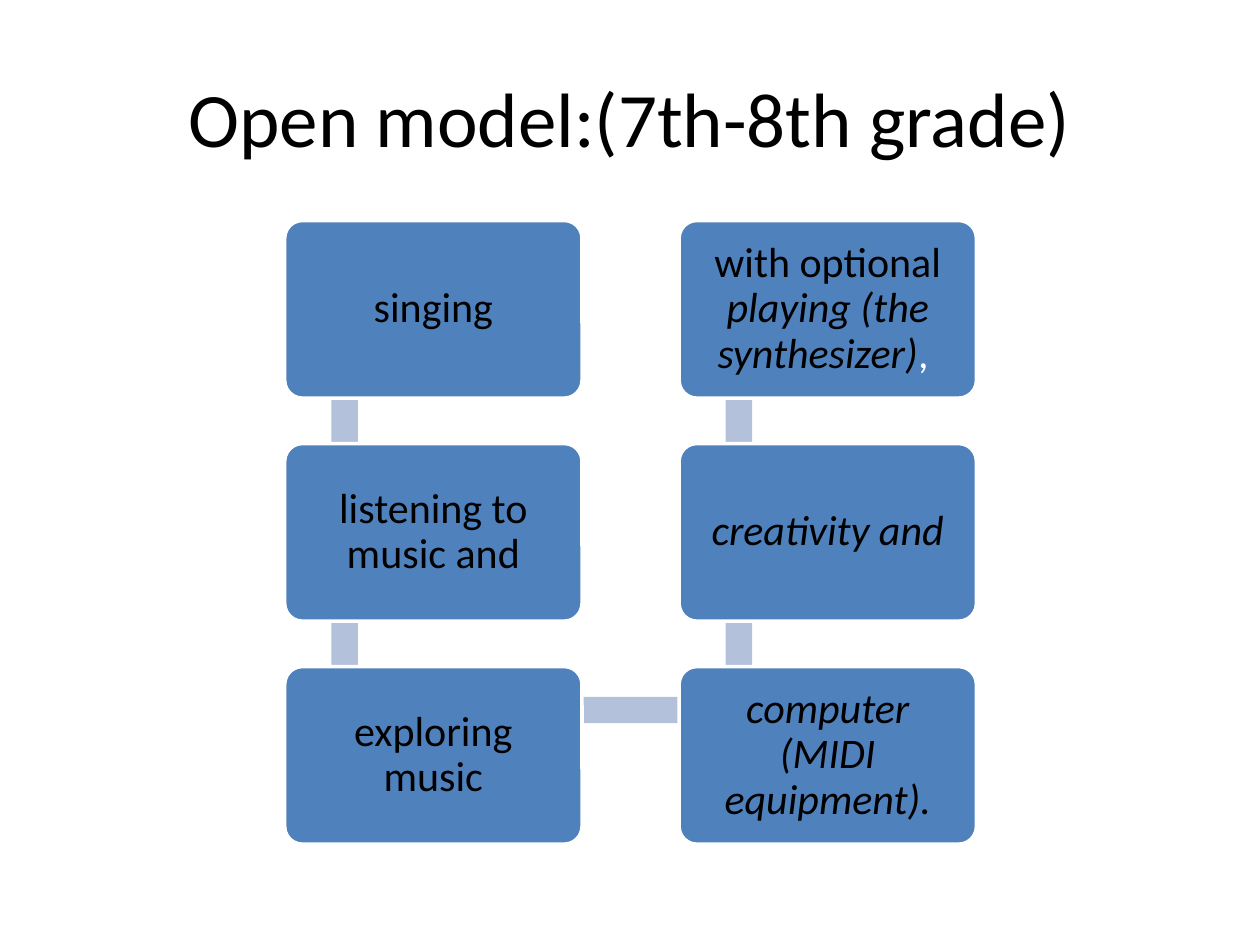
import pptx
import pptx.util
import pptx.dml.color
import pptx.enum.shapes
import pptx.enum.text

Inches = pptx.util.Inches
RGBColor = pptx.dml.color.RGBColor
SHAPES = pptx.enum.shapes.MSO_SHAPE

BLACK = RGBColor(0x00, 0x00, 0x00)
WHITE = RGBColor(0xFF, 0xFF, 0xFF)
BLUE = RGBColor(0x4F, 0x81, 0xBD)
PALE_BLUE = RGBColor(0xB3, 0xC1, 0xDB)

TITLE = "Open model:(7th-8th grade)"
ACTIVITIES = [
    [("singing", {})],
    [("listening to music and", {})],
    [("exploring music", {})],
    [("computer (MIDI equipment).", {"italic": True})],
    [("creativity and", {"italic": True})],
    [
        ("with optional ", {}),
        ("playing (the synthesizer)", {"italic": True}),
        (", ", {"color": WHITE}),
    ],
]

ROWS = 3
GRID_LEFT, GRID_TOP = 2.26, 1.75
COLUMN_STEP, ROW_STEP = 3.13, 1.77
BOX_WIDTH, BOX_HEIGHT = 2.36, 1.41
BAR_THICKNESS = 0.21


def add_text(paragraph, text, size=24, color=BLACK, italic=None):
    """Append a formatted run to a paragraph."""
    run = paragraph.add_run()
    run.text = text
    run.font.name = "Calibri"
    run.font.size = pptx.util.Pt(size)
    run.font.color.rgb = color
    run.font.italic = italic


def add_block(slide, kind, fill, left, top, width, height):
    """Add a filled shape without shadow or outline."""
    block = slide.shapes.add_shape(
        kind, Inches(left), Inches(top), Inches(width), Inches(height))
    block.shadow.inherit = False
    block.fill.solid()
    block.fill.fore_color.rgb = fill
    block.line.fill.background()
    return block


def snake_position(index):
    """Return the corner of a cell, going down one column and up the next."""
    column, step = divmod(index, ROWS)
    row = ROWS - 1 - step if column % 2 else step
    return GRID_LEFT + column * COLUMN_STEP, GRID_TOP + row * ROW_STEP


def add_bar(slide, start, end):
    """Join two neighbouring cells with a bar."""
    left, top = min(start, end)
    if start[0] == end[0]:
        frame = left + 0.37, top + 0.35, BAR_THICKNESS, ROW_STEP
    else:
        frame = left + 0.48, top + 0.24, COLUMN_STEP, BAR_THICKNESS
    add_block(slide, SHAPES.RECTANGLE, PALE_BLUE, *frame)


def add_activity(slide, position, runs):
    """Add one rounded box with its text."""
    box = add_block(slide, SHAPES.ROUNDED_RECTANGLE, BLUE, *position, BOX_WIDTH, BOX_HEIGHT)
    box.adjustments[0] = 0.1
    box.line.color.rgb = WHITE
    box.line.width = pptx.util.Pt(2)
    frame = box.text_frame
    frame.word_wrap = True
    frame.vertical_anchor = pptx.enum.text.MSO_ANCHOR.MIDDLE
    frame.margin_left = frame.margin_right = Inches(0.1)
    frame.margin_top = frame.margin_bottom = Inches(0.1)
    paragraph = frame.paragraphs[0]
    paragraph.alignment = pptx.enum.text.PP_ALIGN.CENTER
    paragraph.line_spacing = 0.9
    for text, style in runs:
        add_text(paragraph, text, **style)


def main():
    """Build the slide and save it."""
    deck = pptx.Presentation()
    deck.slide_width, deck.slide_height = Inches(10), Inches(7.5)
    slide = deck.slides.add_slide(deck.slide_layouts[5])

    title = slide.shapes.title
    title.left, title.top = Inches(0.5), Inches(0.3)
    title.width, title.height = Inches(9), Inches(1.25)
    title.text_frame.vertical_anchor = pptx.enum.text.MSO_ANCHOR.MIDDLE
    heading = title.text_frame.paragraphs[0]
    heading.alignment = pptx.enum.text.PP_ALIGN.CENTER
    add_text(heading, TITLE, size=44)

    positions = [snake_position(index) for index in range(len(ACTIVITIES))]
    for start, end in zip(positions, positions[1:]):
        add_bar(slide, start, end)
    for position, runs in zip(positions, ACTIVITIES):
        add_activity(slide, position, runs)
    deck.save("out.pptx")


if __name__ == "__main__":
    main()
